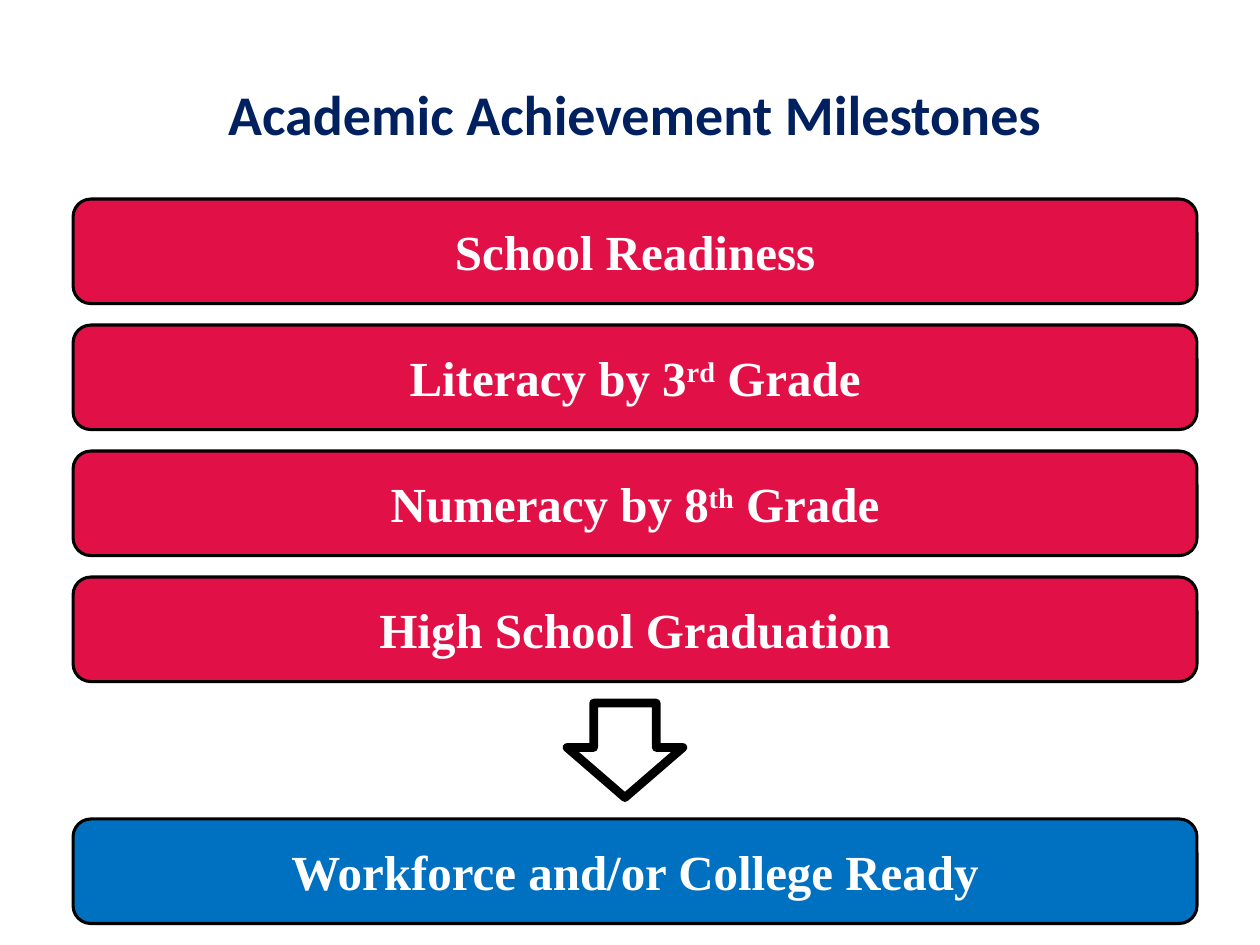
import pptx
import pptx.dml.color
import pptx.enum.shapes
import pptx.enum.text
import pptx.util

Inches = pptx.util.Inches
Pt = pptx.util.Pt
ShapeType = pptx.enum.shapes.MSO_SHAPE

LEFT, WIDTH, BAR_HEIGHT = 0.58, 8.92, 0.83
FIRST_TOP, BAR_STEP = 1.58, 1.0
MILESTONES = [
    ["School Readiness"],
    ["Literacy by 3", "rd", " Grade"],
    ["Numeracy by 8", "th", " Grade"],
    ["High School Graduation"],
]


def color(value):
    return pptx.dml.color.RGBColor.from_string(value)


class MilestoneSlide:
    red, blue, navy = "E11148", "0070C0", "002060"
    white, black = "FFFFFF", "000000"
    title_font, bar_font = "Calibri", "Times New Roman"

    def __init__(self, presentation):
        self.slide = presentation.slides.add_slide(presentation.slide_layouts[6])

    def fill_paragraph(self, paragraph, parts, font_name, size, font_color):
        paragraph.alignment = pptx.enum.text.PP_ALIGN.CENTER
        paragraph.font.name = font_name
        paragraph.font.size = Pt(size)
        paragraph.font.bold = True
        paragraph.font.color.rgb = color(font_color)
        for index, part in enumerate(parts):
            run = paragraph.add_run()
            run.text = part
            if index == 1:
                run._r.get_or_add_rPr().set("baseline", "30000")

    def title(self, text, top, height):
        box = self.slide.shapes.add_textbox(
            Inches(LEFT), Inches(top), Inches(WIDTH), Inches(height))
        box.text_frame.word_wrap = True
        self.fill_paragraph(
            box.text_frame.paragraphs[0], [text], self.title_font, 32, self.navy)

    def outlined(self, kind, left, top, width, height, adjustments, line_width):
        shape = self.slide.shapes.add_shape(
            kind, Inches(left), Inches(top), Inches(width), Inches(height))
        shape.shadow.inherit = False
        for index, value in enumerate(adjustments):
            shape.adjustments[index] = value
        shape.line.color.rgb = color(self.black)
        shape.line.width = Pt(line_width)
        return shape

    def bar(self, parts, top, fill):
        shape = self.outlined(
            ShapeType.ROUNDED_RECTANGLE, LEFT, top, WIDTH, BAR_HEIGHT, [0.17], 1.75)
        shape.fill.solid()
        shape.fill.fore_color.rgb = color(fill)
        frame = shape.text_frame
        frame.word_wrap = False
        frame.vertical_anchor = pptx.enum.text.MSO_ANCHOR.MIDDLE
        self.fill_paragraph(frame.paragraphs[0], parts, self.bar_font, 28, self.white)

    def arrow(self, left, top, width, height):
        shape = self.outlined(
            ShapeType.DOWN_ARROW, left, top, width, height, [0.54, 0.53], 5)
        shape.fill.background()


def main():
    presentation = pptx.Presentation()
    presentation.slide_width = Inches(10)
    presentation.slide_height = Inches(7.5)
    page = MilestoneSlide(presentation)
    page.title("Academic Achievement Milestones", 0.58, 0.63)
    for index, parts in enumerate(MILESTONES):
        page.bar(parts, FIRST_TOP + index * BAR_STEP, page.red)
    page.bar(["Workforce and/or College Ready"], 6.5, page.blue)
    page.arrow(4.5, 5.58, 0.92, 0.75)
    presentation.save("out.pptx")


if __name__ == "__main__":
    main()
